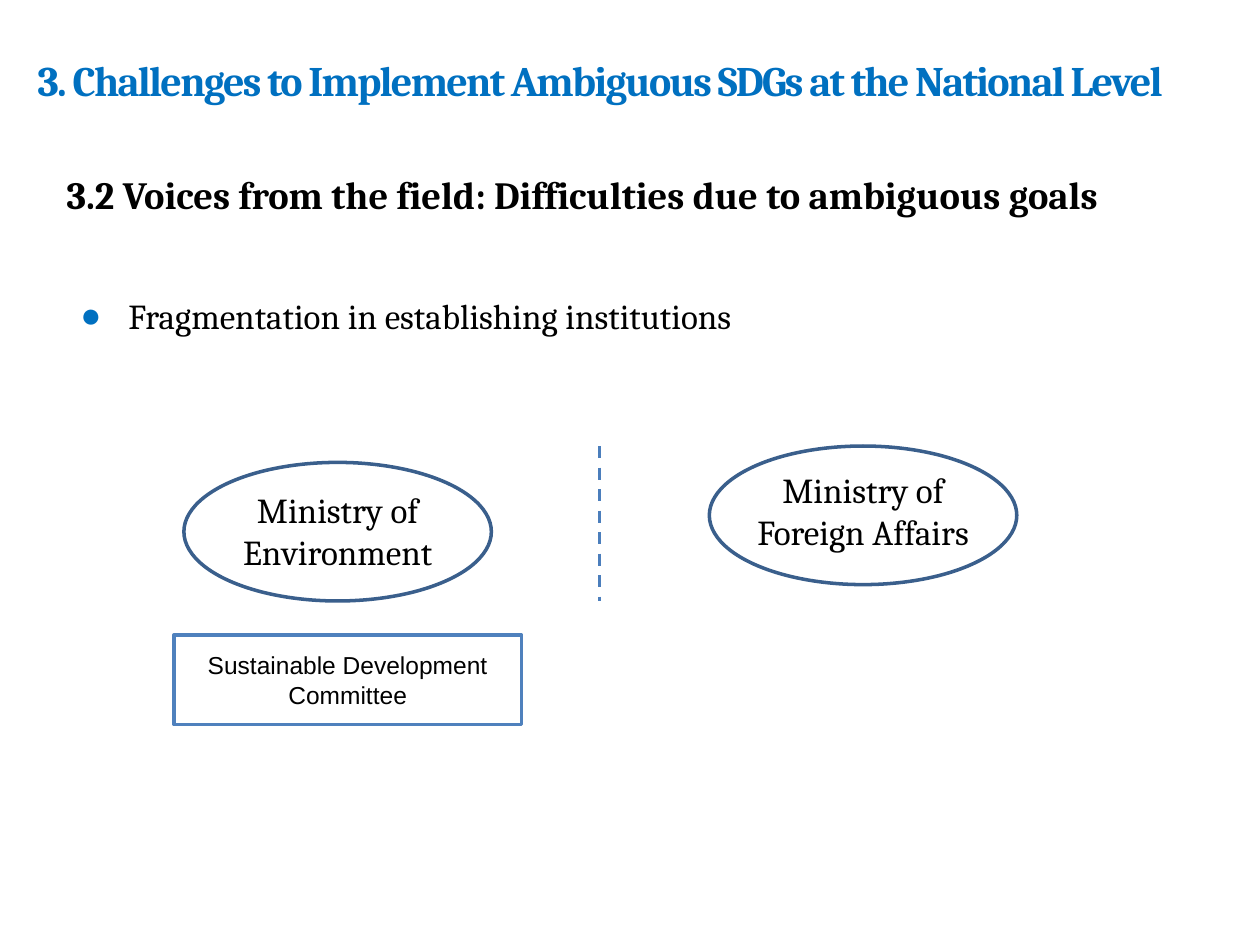
import collections
import dataclasses

import pptx
import pptx.dml.color
import pptx.enum.dml
import pptx.enum.shapes
import pptx.enum.text
import pptx.oxml
import pptx.oxml.ns
import pptx.util

Box = collections.namedtuple("Box", "left top width height")
COLUMNS, ROWS = 100, 75
CELL = pptx.util.Inches(0.1)
SHAPE = pptx.enum.shapes.MSO_SHAPE
CENTER = pptx.enum.text.PP_ALIGN.CENTER


@dataclasses.dataclass(frozen=True)
class Theme:
    """Colours, fonts and type sizes of the slide."""
    ink: str = "000000"
    accent: str = "0070C0"
    paper: str = "FFFFFF"
    ellipse_line: str = "3A5F8C"
    box_line: str = "4F81BD"
    divider_line: str = "4B7EBC"
    serif: str = "Cambria"
    sans: str = "Arial"
    title: int = 24
    heading: int = 22
    body: int = 20
    small: int = 14
    outline: float = 2
    divider: float = 1.75


THEME = Theme()


def rgb(value):
    """Return a colour object for a hex string."""
    return pptx.dml.color.RGBColor.from_string(value)


def cells(*counts):
    """Turn counts of grid cells into slide lengths."""
    return [pptx.util.Emu(round(count * CELL)) for count in counts]


def within(region, left, top, width, height):
    """Return a box placed relative to a region."""
    return Box(region.left + left, region.top + top, width, height)


def write(s, text, size, color=THEME.ink, font=THEME.serif, bold=False, align=None):
    """Set and format the single paragraph of a shape and return it."""
    tf = s.text_frame
    tf.word_wrap = True
    p = tf.paragraphs[0]
    p.text = text
    p.alignment = align
    r = p.runs[0]
    r.font.name, r.font.size, r.font.bold = font, pptx.util.Pt(size), bold
    r.font.color.rgb = rgb(color)
    return p


def add_label(slide, box, text, size, **style):
    """Add a text box and return its paragraph."""
    return write(slide.shapes.add_textbox(*cells(*box)), text, size, **style)


def add_outline(slide, kind, box, color):
    """Add an outlined shape without fill or shadow."""
    s = slide.shapes.add_shape(kind, *cells(*box))
    s.shadow.inherit = False
    s.fill.background()
    s.line.color.rgb = rgb(color)
    s.line.width = pptx.util.Pt(THEME.outline)
    return s


def add_title(slide, box):
    """Place the tightly spaced slide title."""
    p = add_label(slide, box,
                  "3. Challenges to Implement Ambiguous SDGs at the National Level",
                  THEME.title, color=THEME.accent, bold=True)
    p.runs[0].font._element.set("spc", "-100")


def add_heading(slide, box):
    """Place the section heading."""
    add_label(slide, box, "3.2 Voices from the field: Difficulties due to ambiguous goals",
              THEME.heading, bold=True)


def add_bullet(slide, box):
    """Place the bulleted statement."""
    p = add_label(slide, box, "Fragmentation in establishing institutions", THEME.body)
    properties = p._p.get_or_add_pPr()
    indent = cells(3.8)[0]
    properties.set("marL", str(indent))
    properties.set("indent", str(-indent))
    namespace = pptx.oxml.ns.nsdecls("a")
    for xml in (f'<a:buClr {namespace}><a:srgbClr val="{THEME.accent}"/></a:buClr>',
                f'<a:buFont {namespace} typeface="{THEME.sans}"/>',
                f'<a:buChar {namespace} char="●"/>'):
        properties.append(pptx.oxml.parse_xml(xml))


def add_ministry(slide, box, name, drop):
    """Place a ministry ellipse with its label dropped below the top edge."""
    add_outline(slide, SHAPE.OVAL, box, THEME.ellipse_line)
    label = within(box, 1.95, drop, box.width - 3.9, 7.7)
    add_label(slide, label, name, THEME.body, align=CENTER)


def add_committee(slide, box):
    """Place the committee rectangle."""
    s = add_outline(slide, SHAPE.RECTANGLE, box, THEME.box_line)
    s.fill.solid()
    s.fill.fore_color.rgb = rgb(THEME.paper)
    s.text_frame.vertical_anchor = pptx.enum.text.MSO_ANCHOR.MIDDLE
    write(s, "Sustainable Development Committee", THEME.small, font=THEME.sans, align=CENTER)


def add_divider(slide, box):
    """Place the dashed line down the left edge of a box."""
    s = slide.shapes.add_connector(
        pptx.enum.shapes.MSO_CONNECTOR.STRAIGHT,
        *cells(box.left, box.top, box.left + box.width, box.top + box.height))
    s.line.color.rgb = rgb(THEME.divider_line)
    s.line.width = pptx.util.Pt(THEME.divider)
    s.line.dash_style = pptx.enum.dml.MSO_LINE.DASH
    s._element.spPr.append(
        pptx.oxml.parse_xml(f'<a:effectLst {pptx.oxml.ns.nsdecls("a")}/>'))


def add_institutions(slide, box):
    """Place the two separated ministries and the committee."""
    add_ministry(slide, within(box, 0.8, 1.3, 24.4, 11), "Ministry of Environment", 1.6)
    add_committee(slide, within(box, 0, 15, 27.6, 7.1))
    add_ministry(slide, within(box, 42.5, 0, 24.4, 11), "Ministry of Foreign Affairs", 1.3)
    add_divider(slide, within(box, 33.8, 0, 0, 12.3))


def main():
    """Build and save the slide."""
    prs = pptx.Presentation()
    prs.slide_width, prs.slide_height = cells(COLUMNS, ROWS)
    slide = prs.slides.add_slide(prs.slide_layouts[6])
    add_bullet(slide, Box(5.4, 22.9, 90, 10.7))
    add_institutions(slide, Box(13.8, 35.4, 66.9, 22.1))
    add_title(slide, Box(2, 3.8, 96.9, 9.3))
    add_heading(slide, Box(4.3, 13.1, 89.8, 6.1))
    prs.save("out.pptx")


if __name__ == "__main__":
    main()
